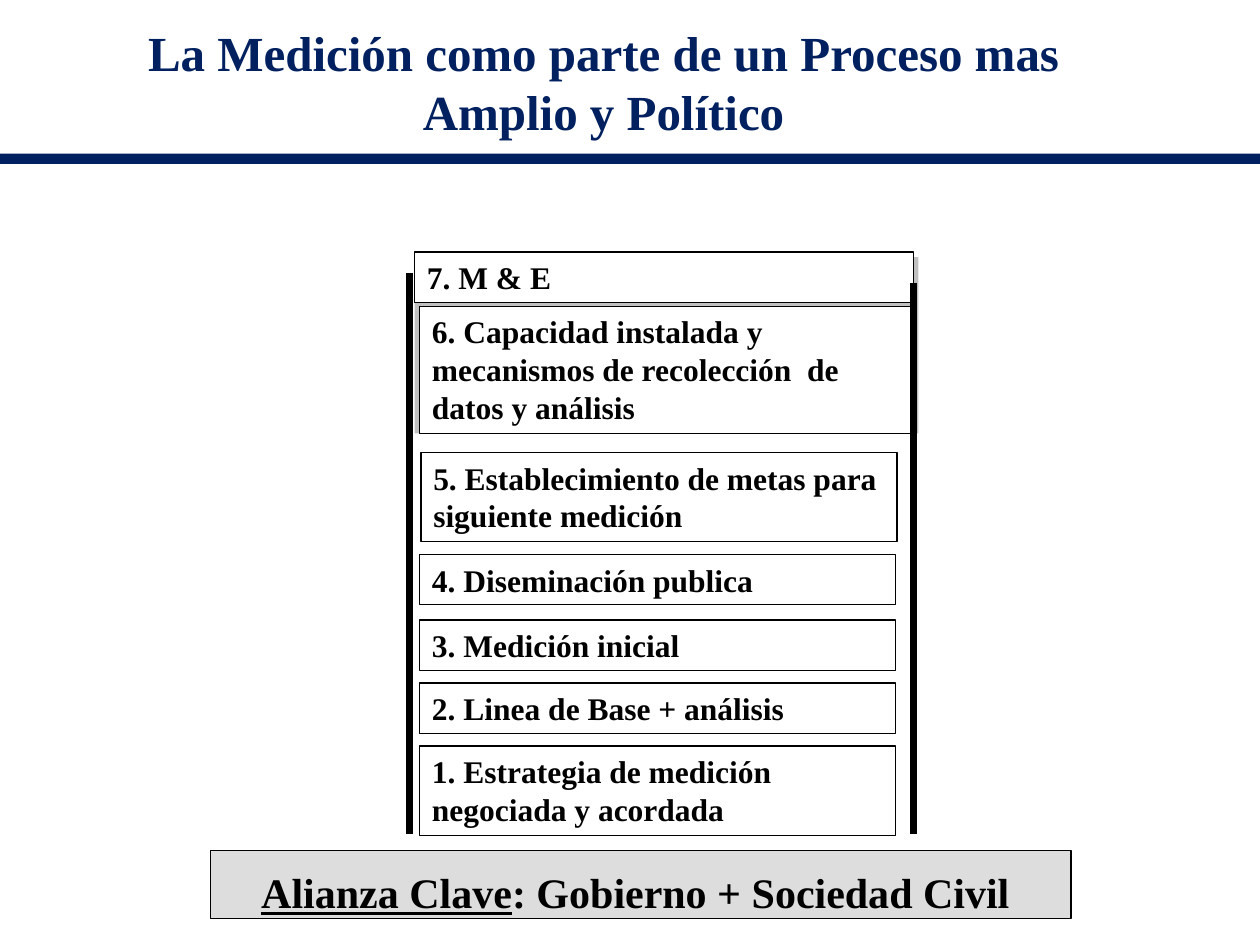
from dataclasses import dataclass

from lxml import etree
from pptx import Presentation
from pptx.dml.color import RGBColor
from pptx.enum.shapes import MSO_CONNECTOR, MSO_SHAPE
from pptx.enum.text import MSO_ANCHOR, PP_ALIGN
from pptx.oxml.ns import qn
from pptx.util import Inches, Pt

RECT = MSO_SHAPE.RECTANGLE
STRAIGHT = MSO_CONNECTOR.STRAIGHT
TOP = MSO_ANCHOR.TOP
LEFT = PP_ALIGN.LEFT
CENTER = PP_ALIGN.CENTER


@dataclass(frozen=True)
class Theme:
    font: str = "Times New Roman"
    navy: str = "002060"
    black: str = "000000"
    white: str = "FFFFFF"
    shade: str = "C0C0C0"
    base: str = "DDDDDD"
    title: int = 28
    key: int = 24
    step: int = 18
    edge: float = 0.75
    rail: float = 4


THEME = Theme()

STEPS = [
    ("1. Estrategia de medición negociada y acordada", 3.33, 5.92, 3.78, 0.71),
    ("2. Linea de Base + análisis", 3.33, 5.42, 3.78, 0.4),
    ("3. Medición inicial", 3.33, 4.92, 3.78, 0.4),
    ("4. Diseminación publica", 3.33, 4.4, 3.78, 0.4),
    ("5. Establecimiento de metas para siguiente medición",
     3.34, 3.59, 3.78, 0.71),
    ("6. Capacidad instalada y mecanismos de recolección  de datos y análisis",
     3.33, 2.43, 3.92, 1.01),
    ("7. M & E", 3.29, 2, 3.96, 0.4),
]


def color(code):
    return RGBColor.from_string(code)


def write(shape, *parts, size=THEME.step, ink=THEME.black, align=LEFT,
          space=None, under=0):
    frame = shape.text_frame
    frame.word_wrap = True
    frame.vertical_anchor = TOP
    para = frame.paragraphs[0]
    para.alignment = align
    para.line_spacing = space
    for spot, text in enumerate(parts):
        run = para.add_run()
        run.text = text
        font = run.font
        font.name = THEME.font
        font.size = Pt(size)
        font.bold = True
        font.underline = spot < under
        font.color.rgb = color(ink)


def add_box(slide, left, top, width, height, fill, edge=True):
    box = slide.shapes.add_shape(
        RECT, Inches(left), Inches(top), Inches(width), Inches(height))
    box.shadow.inherit = False
    box.fill.solid()
    box.fill.fore_color.rgb = color(fill)
    if edge:
        box.line.color.rgb = color(THEME.black)
        box.line.width = Pt(THEME.edge)
    else:
        box.line.fill.background()
    return box


def add_rail(slide, left, top, foot):
    rail = slide.shapes.add_connector(
        STRAIGHT, Inches(left), Inches(foot), Inches(left), Inches(top))
    rail.line.color.rgb = color(THEME.black)
    rail.line.width = Pt(THEME.rail)
    etree.SubElement(rail._element.spPr, qn("a:effectLst"))


def add_title(slide, text):
    box = slide.shapes.add_textbox(
        Inches(0.83), Inches(0.13), Inches(7.92), Inches(1.04))
    write(box, text, size=THEME.title, ink=THEME.navy, align=CENTER)


def main():
    deck = Presentation()
    deck.slide_width = Inches(10)
    deck.slide_height = Inches(7.5)
    slide = deck.slides.add_slide(deck.slide_layouts[6])

    add_box(slide, 3.29, 2.04, 4, 1.4, THEME.shade, edge=False)
    for text, *place in STEPS:
        write(add_box(slide, *place, THEME.white), text)

    base = add_box(slide, 1.67, 6.75, 6.83, 0.54, THEME.base)
    write(base, "Alianza Clave", ": Gobierno + Sociedad Civil ",
          size=THEME.key, align=CENTER, space=1.2, under=1)

    add_rail(slide, 7.25, 2.25, 6.62)
    add_rail(slide, 3.25, 2.17, 6.62)
    add_title(slide,
              "La Medición como parte de un Proceso mas Amplio y Político")
    add_box(slide, 0, 1.22, 10, 0.08, THEME.navy, edge=False)
    deck.save("out.pptx")


if __name__ == "__main__":
    main()
